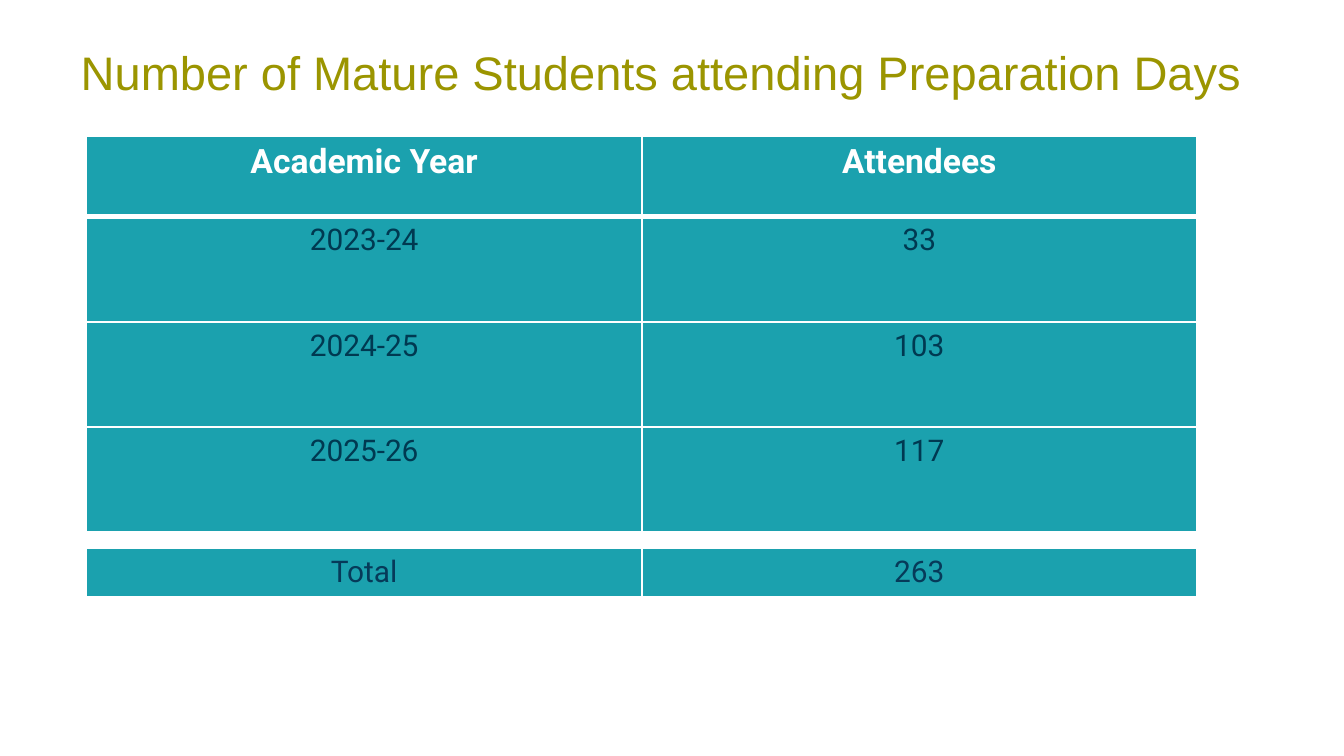
from lxml.etree import SubElement
from pptx import Presentation
from pptx.dml.color import RGBColor
from pptx.enum.text import MSO_ANCHOR, PP_ALIGN
from pptx.oxml.ns import qn
from pptx.util import Pt

TITLE = "Number of Mature Students attending Preparation Days"
ATTENDANCE = [
    ("Academic Year", "Attendees"),
    ("2023-24", "33"),
    ("2024-25", "103"),
    ("2025-26", "117"),
]
TOTAL = [("Total", "263")]

OLIVE, TEAL, WHITE = "9B9500", "1BA1AE", "FFFFFF"
NAVY, TOTAL_NAVY = "003951", "063A59"
TABLE_LEFT, COLUMN_WIDTH = 46.4, 297.4
HEADER_HEIGHT, YEAR_HEIGHT, TOTAL_HEIGHT = 43.2, 56.4, 26.6


def style_font(font, name, size, color, bold=False):
    font.name = name
    font.size = Pt(size)
    font.bold = bold
    font.color.rgb = RGBColor.from_string(color)


def set_borders(cell, top, bottom):
    properties = cell._tc.get_or_add_tcPr()
    widths = {"a:lnL": 1, "a:lnR": 1, "a:lnT": top, "a:lnB": bottom}
    for position, (tag, width) in enumerate(widths.items()):
        line = SubElement(properties, qn(tag), w=str(Pt(width)))
        fill = SubElement(line, qn("a:solidFill"))
        SubElement(fill, qn("a:srgbClr"), val=WHITE)
        properties.insert(position, line)


def add_teal_table(slide, rows, top, heights, text_color, has_header):
    shape = slide.shapes.add_table(
        len(rows), 2, Pt(TABLE_LEFT), Pt(top), Pt(2 * COLUMN_WIDTH), Pt(sum(heights))
    )
    table = shape.table
    table.first_row = has_header
    table.horz_banding = False
    for column in table.columns:
        column.width = Pt(COLUMN_WIDTH)
    for row_index, (values, height) in enumerate(zip(rows, heights)):
        table.rows[row_index].height = Pt(height)
        header = has_header and row_index == 0
        below_header = has_header and row_index == 1
        last_total = not has_header
        for column_index, value in enumerate(values):
            cell = table.cell(row_index, column_index)
            cell.fill.solid()
            cell.fill.fore_color.rgb = RGBColor.from_string(TEAL)
            set_borders(cell, 3 if below_header else 1, 3 if header or last_total else 1)
            cell.text_frame.text = value
            paragraph = cell.text_frame.paragraphs[0]
            paragraph.alignment = PP_ALIGN.CENTER
            size, color = (18, WHITE) if header else (16, text_color)
            style_font(paragraph.runs[0].font, "Roboto", size, color, header)


def main():
    presentation = Presentation()
    presentation.slide_width, presentation.slide_height = Pt(720), Pt(405)
    slide = presentation.slides.add_slide(presentation.slide_layouts[5])

    title = slide.shapes.title
    title.left, title.top, title.width, title.height = Pt(36), Pt(16.6), Pt(648), Pt(47.5)
    text_frame = title.text_frame
    text_frame.text = TITLE
    text_frame.vertical_anchor = MSO_ANCHOR.TOP
    text_frame.margin_top = Pt(6.5)
    text_frame.paragraphs[0].alignment = PP_ALIGN.LEFT
    style_font(text_frame.paragraphs[0].runs[0].font, "Arial", 25.2, OLIVE)

    year_heights = [YEAR_HEIGHT] * (len(ATTENDANCE) - 1)
    add_teal_table(slide, ATTENDANCE, 72.8, [HEADER_HEIGHT] + year_heights, NAVY, True)
    add_teal_table(slide, TOTAL, 293.8, [TOTAL_HEIGHT], TOTAL_NAVY, False)
    presentation.save("out.pptx")


if __name__ == "__main__":
    main()
